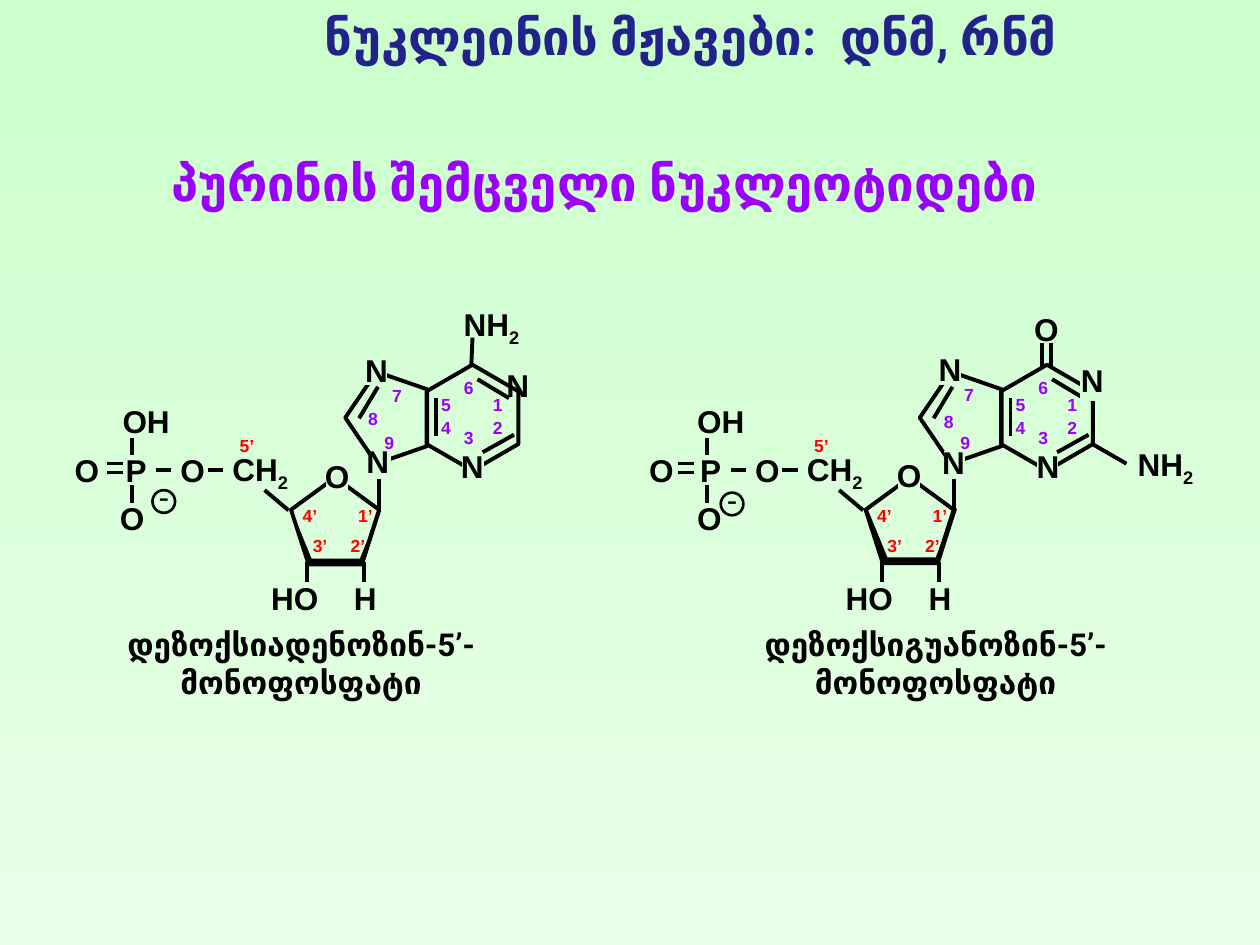
from lxml.etree import SubElement
from pptx import Presentation
from pptx.dml.color import RGBColor
from pptx.enum.shapes import MSO_CONNECTOR, MSO_SHAPE
from pptx.enum.text import MSO_AUTO_SIZE, PP_ALIGN
from pptx.oxml.ns import qn
from pptx.util import Inches, Pt

BLACK, RED, VIOLET, NAVY = "000000", "FF0000", "9900FF", "22228B"
SHIFT = 4.56

PRIMES = [("1’", 2.74, 3.96), ("2’", 2.68, 4.2), ("3’", 2.38, 4.2),
          ("4’", 2.3, 3.96), ("5’", 1.8, 3.4)]
DIGITS = [("1", 3.81, 3.08), ("2", 3.81, 3.26), ("3", 3.58, 3.34),
          ("4", 3.4, 3.26), ("5", 3.4, 3.08), ("6", 3.58, 2.94)]
GROUPS = [("CH_2", 1.74, 3.52, 0.65), ("HO", 2.05, 4.55, 0.58), ("H", 2.71, 4.55, 0.38),
          ("O", 0.49, 3.53, 0.4), ("P", 0.88, 3.53, 0.4), ("O", 1.33, 3.53, 0.4),
          ("OH", 0.87, 3.14, 0.58)]
RINGS = [(MSO_SHAPE.REGULAR_PENTAGON, 2.31, 3.79, 0.7, 0.67, 0),
         (MSO_SHAPE.HEXAGON, 3.33, 2.95, 0.84, 0.73, 270),
         (MSO_SHAPE.REGULAR_PENTAGON, 2.7, 2.99, 0.73, 0.65, 270)]
BONDS = [(2.29, 4.05, 2.1, 3.89), (2.89, 4.46, 2.89, 4.62), (2.44, 4.46, 2.44, 4.62),
         (1.24, 3.73, 1.36, 3.73), (1.65, 3.73, 1.77, 3.73), (1.05, 3.85, 1.05, 3.99),
         (1.05, 3.48, 1.05, 3.61), (3.46, 3.16, 3.46, 3.46), (3.83, 3.59, 4.08, 3.45),
         (4.04, 3.16, 3.79, 3.01), (3, 3.07, 2.85, 3.32), (3.01, 3.8, 3.01, 4.05)]
WEDGE = [(0, 0), (0.14, 0.44), (0.57, 0.44), (0.71, 0), (0.55, 0.39), (0.16, 0.39)]

ADENINE = {
    "shift": 0,
    "digits": [("7", 3.01, 3.01), ("8", 2.82, 3.19), ("9", 2.95, 3.38)],
    "double": 0.85, "oxide": 0.85, "charge": (1.21, 3.89), "wedge": (2.31, 4.05),
    "bonds": [(3.75, 2.68, 3.74, 2.91)],
    "masks": [(3.67, 3.62), (2.93, 3.6), (2.59, 3.73), (2.9, 2.88)],
    "atoms": [("NH_2", 3.49, 2.37, 0.82), ("O", 2.48, 3.58, 0.32), ("N", 3.92, 2.86, 0.28),
              ("N", 2.8, 2.74, 0.25), ("N", 3.56, 3.5, 0.27), ("N", 2.81, 3.46, 0.26)],
    "name": ("დეზოქსიადენოზინ-5’-", 0, 4.78),
}
GUANINE = {
    "shift": SHIFT,
    "digits": [("7", 7.55, 3), ("8", 7.39, 3.21), ("9", 7.52, 3.38)],
    "double": 5.38, "oxide": 5.43, "charge": (5.72, 3.91), "wedge": (6.88, 4.04),
    "bonds": [(8.27, 2.72, 8.27, 2.91), (8.34, 2.72, 8.34, 2.91), (8.94, 3.68, 8.68, 3.53)],
    "masks": [(7.13, 3.73), (7.46, 2.88), (7.49, 3.58), (8.57, 3.01), (8.23, 3.64)],
    "atoms": [("NH_2", 8.84, 3.48, 0.82), ("O", 8.11, 2.41, 0.28), ("N", 7.35, 2.73, 0.25),
              ("N", 8.13, 3.5, 0.27), ("N", 7.38, 3.47, 0.26), ("O", 7.02, 3.57, 0.26),
              ("N", 8.48, 2.82, 0.28)],
    "name": ("დეზოქსიგუანოზინ-5’-", 5.18, 4.49),
}


def tint(form, code):
    """Apply a hex colour to a fill or font colour."""
    form.rgb = RGBColor.from_string(code)


def label(slide, lines, x, y, w, h=0.4, size=18, color=BLACK, font="Arial",
          wrap=False, bold=True, align=PP_ALIGN.CENTER):
    """Add a text box; an underscore starts a subscript run."""
    frame = slide.shapes.add_textbox(Inches(x), Inches(y), Inches(w), Inches(h)).text_frame
    frame.word_wrap = wrap
    frame.auto_size = MSO_AUTO_SIZE.SHAPE_TO_FIT_TEXT
    para = frame.paragraphs[0]
    para.alignment = align
    for row, line in enumerate(lines.split("\n")):
        if row:
            para.add_line_break()
        for part, text in enumerate(line.split("_")):
            run = para.add_run()
            run.text = text
            run.font.name, run.font.size, run.font.bold = font, Pt(size), bold
            tint(run.font.color, color)
            if part:
                run.font._element.set("baseline", "-25000")


def bond(slide, x1, y1, x2, y2, width=2.25):
    """Draw a straight bond line."""
    line = slide.shapes.add_connector(
        MSO_CONNECTOR.STRAIGHT, Inches(x1), Inches(y1), Inches(x2), Inches(y2))
    tint(line.line.color, BLACK)
    line.line.width = Pt(width)
    SubElement(line._element.spPr, qn("a:effectLst"))


def outline(slide, kind, x, y, w, h, turn=0, width=2.25):
    """Draw an unfilled ring."""
    ring = slide.shapes.add_shape(kind, Inches(x), Inches(y), Inches(w), Inches(h))
    ring.shadow.inherit = False
    ring.fill.background()
    tint(ring.line.color, BLACK)
    ring.line.width = Pt(width)
    ring.rotation = turn
    if kind == MSO_SHAPE.HEXAGON:
        ring.adjustments[0] = 0.289


def mask(slide, x, y):
    """Hide a ring corner behind a square filled with the slide background."""
    square = slide.shapes.add_shape(
        MSO_SHAPE.RECTANGLE, Inches(x), Inches(y), Inches(0.17), Inches(0.17))
    square.shadow.inherit = False
    square.line.fill.background()
    square._element.set("useBgFill", "1")


def wedge(slide, x, y):
    """Draw the bold front edge of the sugar ring."""
    spots = [(Inches(x + dx), Inches(y + dy)) for dx, dy in WEDGE]
    build = slide.shapes.build_freeform(*spots[0])
    build.add_line_segments(spots[1:], close=True)
    edge = build.convert_to_shape()
    edge.shadow.inherit = False
    edge.fill.solid()
    tint(edge.fill.fore_color, BLACK)
    tint(edge.line.color, BLACK)
    edge.line.width = Pt(0.75)


def charge(slide, x, y):
    """Draw a circled minus sign."""
    outline(slide, MSO_SHAPE.OVAL, x, y, 0.18, 0.18, width=1.5)
    label(slide, "-", x - 0.05, y - 0.15, 0.28, bold=False, align=PP_ALIGN.LEFT)


def draw(slide, base):
    """Draw one nucleotide from the common frame and its own parts."""
    shift = base["shift"]
    for text, x, y in PRIMES:
        label(slide, text, x + shift, y, 0.32, 0.27, 10, RED)
    for kind, x, *rest in RINGS:
        outline(slide, kind, x + shift, *rest)
    for x1, y1, x2, y2 in BONDS:
        bond(slide, x1 + shift, y1, x2 + shift, y2)
    for ends in base["bonds"]:
        bond(slide, *ends)
    for y in (3.68, 3.75):
        bond(slide, base["double"], y, base["double"] + 0.13, y, 1.5)
    for text, x, y, w in GROUPS:
        label(slide, text, x + shift, y, w)
    label(slide, "O", base["oxide"], 3.91, 0.4)
    for text, x, y in [(t, x + shift, y) for t, x, y in DIGITS] + base["digits"]:
        label(slide, text, x, y, 0.28, 0.27, 10, VIOLET)
    charge(slide, *base["charge"])
    for spot in base["masks"]:
        mask(slide, *spot)
    for atom in base["atoms"]:
        label(slide, *atom, wrap=True)
    wedge(slide, *base["wedge"])
    name, x, w = base["name"]
    label(slide, name + "\nმონოფოსფატი", x, 4.91, w, 0.71, font="Roboto")


def paint(slide):
    """Give the slide its vertical green gradient."""
    fill = slide.background.fill
    fill.gradient()
    fill.gradient_angle = 270
    for stop, code in zip(fill.gradient_stops, ("CCFFCC", "E8FFE8")):
        tint(stop.color, code)


def main():
    """Build and save the slide."""
    deck = Presentation()
    deck.slide_width, deck.slide_height = Inches(10), Inches(7.5)
    slide = deck.slides.add_slide(deck.slide_layouts[6])
    paint(slide)
    label(slide, "ნუკლეინის მჟავები:  დნმ, რნმ", 2.14, 0, 6.68, 1.08, 28, NAVY, "Roboto", True)
    label(slide, "პურინის შემცველი ნუკლეოტიდები", 0.23, 1.16, 9.13, 0.57, 28, VIOLET,
          "Roboto", True)
    for base in (ADENINE, GUANINE):
        draw(slide, base)
    deck.save("out.pptx")


if __name__ == "__main__":
    main()
